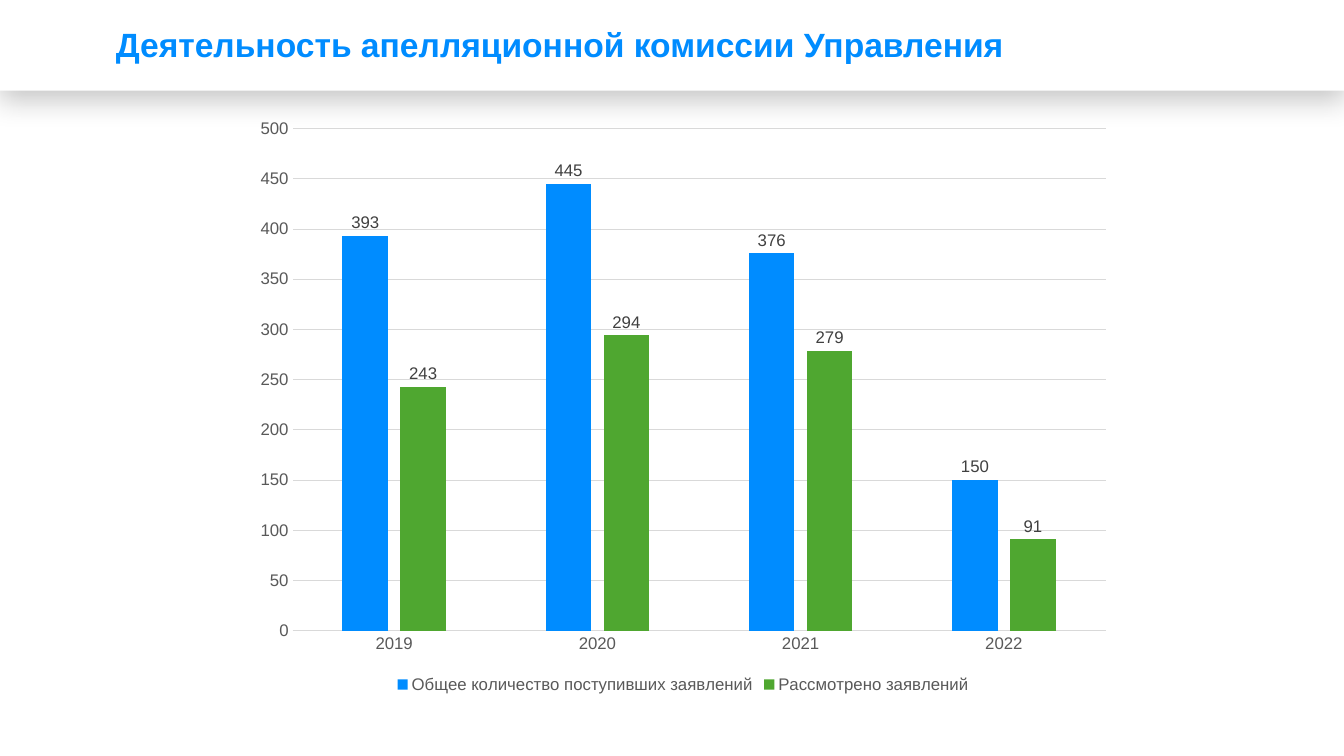
from lxml import etree
from pptx import Presentation
from pptx.chart.data import CategoryChartData
from pptx.dml.color import RGBColor
from pptx.enum.chart import XL_CHART_TYPE, XL_LABEL_POSITION, XL_LEGEND_POSITION, XL_TICK_MARK
from pptx.enum.shapes import MSO_SHAPE
from pptx.enum.text import MSO_ANCHOR
from pptx.oxml import parse_xml
from pptx.util import Inches, Pt

COLUMNS = XL_CHART_TYPE.COLUMN_CLUSTERED
OUTSIDE = XL_LABEL_POSITION.OUTSIDE_END
BOTTOM = XL_LEGEND_POSITION.BOTTOM
NO_TICK = XL_TICK_MARK.NONE
RECT = MSO_SHAPE.RECTANGLE
MIDDLE = MSO_ANCHOR.MIDDLE

FONT = "Arial"
COLORS = {"white": "FFFFFF", "blue": "008CFF", "green": "4FA730",
          "grid": "D9D9D9", "axis": "595959", "label": "404040", "black": "000000"}
YEARS = ["2019", "2020", "2021", "2022"]
SERIES = [
    ("Общее количество поступивших заявлений", [393, 445, 376, 150], "blue"),
    ("Рассмотрено заявлений", [243, 294, 279, 91], "green"),
]


def rgb(name):
    return RGBColor.from_string(COLORS[name])


def style(font, size, color):
    font.name = FONT
    font.size = Pt(size)
    font.color.rgb = rgb(color)


prs = Presentation()
prs.slide_width, prs.slide_height = Inches(13.33), Inches(7.5)
W, H = prs.slide_width, prs.slide_height
s = prs.slides.add_slide(prs.slide_layouts[6])

# Header band with a soft shadow below
band = s.shapes.add_shape(RECT, 0, 0, W, int(H * 0.12))
band.fill.solid()
band.fill.fore_color.rgb = rgb("white")
band.line.fill.background()
band.shadow.inherit = False
effects = band._element.spPr.find("{*}effectLst")
ns = etree.QName(effects).namespace
effects.append(parse_xml(
    f'<a:outerShdw xmlns:a="{ns}" blurRad="{Pt(20)}" dist="{Pt(6)}" dir="5400000" '
    f'algn="t" rotWithShape="0"><a:srgbClr val="{COLORS["black"]}">'
    '<a:alpha val="22000"/></a:srgbClr></a:outerShdw>'))

# Column chart
data = CategoryChartData()
data.categories = YEARS
for name, values, color in SERIES:
    data.add_series(name, values)
chart = s.shapes.add_chart(COLUMNS, Inches(2.41), Inches(1.07),
                           Inches(8.73), Inches(5.85), data).chart
style(chart.font, 10, "black")
chart.has_title = False
chart.has_legend = True
chart.legend.position = BOTTOM
chart.legend.include_in_layout = False
style(chart.legend.font, 12, "axis")

# Columns and their values
plot = chart.plots[0]
plot.gap_width, plot.overlap = 219, -27
plot.vary_by_categories = False
for series, (name, values, color) in zip(plot.series, SERIES):
    series.format.fill.solid()
    series.format.fill.fore_color.rgb = rgb(color)
    labels = series.data_labels
    labels.show_value = True
    labels.position = OUTSIDE
    style(labels.font, 12, "label")

# Axes and gridlines
cat, val = chart.category_axis, chart.value_axis
for axis in (cat, val):
    axis.major_tick_mark = axis.minor_tick_mark = NO_TICK
    style(axis.tick_labels.font, 12, "axis")
val.minimum_scale, val.maximum_scale, val.major_unit = 0, 500, 50
val.has_major_gridlines = True
val.format.line.fill.background()
for line in (cat.format.line, val.major_gridlines.format.line):
    line.color.rgb = rgb("grid")
    line.width = Pt(0.75)

# Title
tf = s.shapes.add_textbox(Inches(1.05), 0, Inches(11.52), Inches(0.92)).text_frame
tf.word_wrap = True
tf.vertical_anchor = MIDDLE
tf.text = "Деятельность апелляционной комиссии Управления"
p = tf.paragraphs[0]
p.line_spacing = 0.9
r = p.runs[0]
style(r.font, 24, "blue")
r.font.bold = True

prs.save("out.pptx")
